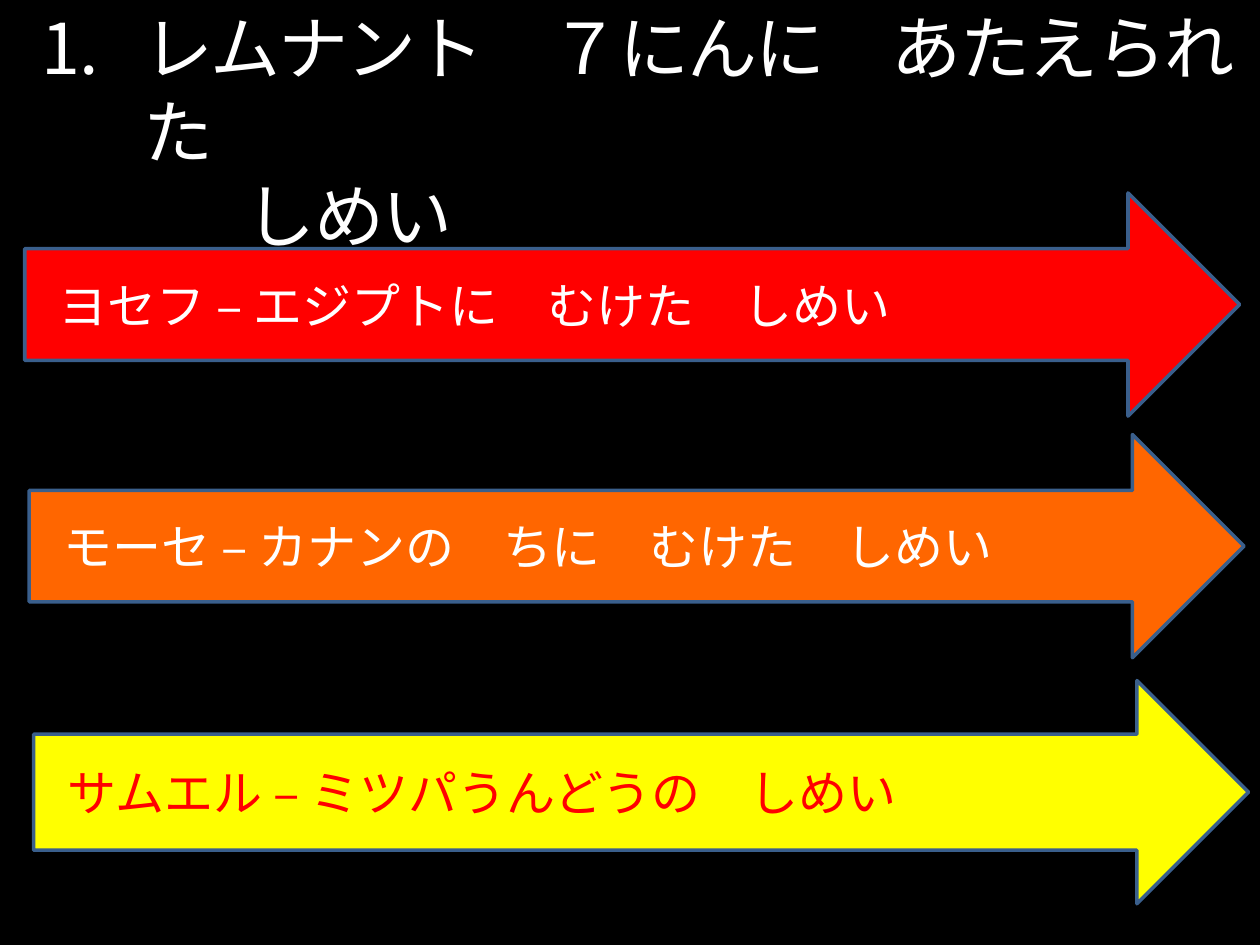
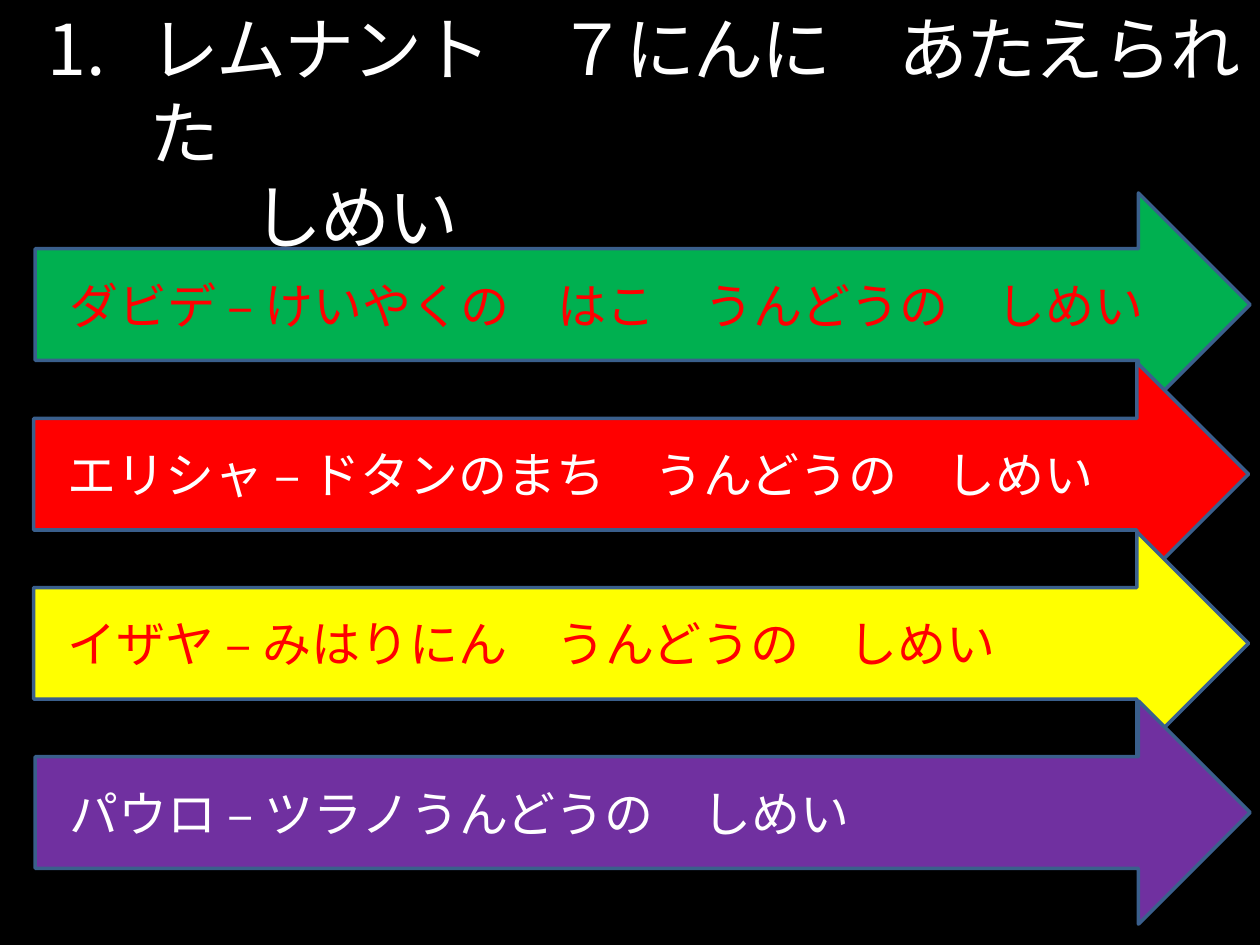
from dataclasses import dataclass

import pptx
import pptx.dml.color
import pptx.enum.shapes
import pptx.enum.text
import pptx.oxml.ns
import pptx.util
from lxml import etree

Cm = pptx.util.Cm
Pt = pptx.util.Pt
RGBColor = pptx.dml.color.RGBColor

BLACK = RGBColor(0x00, 0x00, 0x00)
WHITE = RGBColor(0xFF, 0xFF, 0xFF)
RED = RGBColor(0xFF, 0x00, 0x00)
ORANGE = RGBColor(0xFF, 0x66, 0x00)
YELLOW = RGBColor(0xFF, 0xFF, 0x00)
GREEN = RGBColor(0x00, 0xB0, 0x50)
PURPLE = RGBColor(0x70, 0x30, 0xA0)
OUTLINE = RGBColor(0x3A, 0x5F, 0x8C)

FONT = "Noto Sans CJK JP"
TITLE = "レムナント　７にんに　あたえられた"
TITLE_END = "しめい"


@dataclass(frozen=True)
class Mission:
    text: str
    left: float
    top: float
    fill: RGBColor
    color: RGBColor = WHITE
    shaft: float = 0.5


@dataclass(frozen=True)
class Page:
    title_left: float
    title_top: float
    missions: tuple[Mission, ...]


PAGES = (
    Page(0.58, 1.26, (
        Mission("ヨセフ – エジプトに　むけた　しめい", 0.5, 3.89, RED),
        Mission("モーセ – カナンの　ちに　むけた　しめい", 0.59, 8.76, ORANGE),
        Mission("サムエル – ミツパうんどうの　しめい", 0.68, 13.72, YELLOW, RED, 0.52),
    )),
    Page(0.71, 1.28, (
        Mission("ダビデ – けいやくの　はこ　うんどうの　しめい", 0.71, 3.89, GREEN, RED),
        Mission("エリシャ – ドタンのまち　うんどうの　しめい", 0.68, 7.31, RED),
        Mission("イザヤ – みはりにん　うんどうの　しめい", 0.68, 10.72, YELLOW, RED),
        Mission("パウロ – ツラノうんどうの　しめい", 0.71, 14.13, PURPLE),
    )),
)


def write(p, text: str, *, size: float, color: RGBColor, spacing: int = 0) -> None:
    p.alignment = pptx.enum.text.PP_ALIGN.LEFT
    r = p.add_run()
    r.text = text
    r.font.size = Pt(size)
    r.font.name = FONT
    r.font.color.rgb = color
    rpr = r.font._element
    if spacing:
        rpr.set("spc", str(spacing))
    ea = etree.SubElement(rpr, pptx.oxml.ns.qn("a:ea"))
    ea.set("typeface", FONT)


def indent(p, left: float, first: float = 0) -> None:
    ppr = p._p.get_or_add_pPr()
    ppr.set("marL", str(Cm(left)))
    ppr.set("indent", str(Cm(first)))


def number(p) -> None:
    ppr = p._p.get_or_add_pPr()
    bullet = etree.SubElement(ppr, pptx.oxml.ns.qn("a:buAutoNum"))
    bullet.set("type", "arabicPeriod")


def draw_title(s, left: float, top: float) -> None:
    sp = s.shapes.add_textbox(Cm(left), Cm(top), Cm(24.59), Cm(2.74))
    tf = sp.text_frame
    tf.word_wrap = True
    tf.vertical_anchor = pptx.enum.text.MSO_ANCHOR.MIDDLE
    tf.margin_right = Cm(0.15)
    heading = tf.paragraphs[0]
    indent(heading, 2.06, -2.06)
    number(heading)
    ending = tf.add_paragraph()
    indent(ending, 4.13)
    for p, text in ((heading, TITLE), (ending, TITLE_END)):
        p.line_spacing = Pt(48)
        write(p, text, size=40, color=WHITE, spacing=-100)


def draw_mission(s, mission: Mission) -> None:
    sp = s.shapes.add_shape(
        pptx.enum.shapes.MSO_SHAPE.RIGHT_ARROW,
        Cm(mission.left), Cm(mission.top), Cm(24.49), Cm(4.5),
    )
    sp.shadow.inherit = False
    sp.adjustments[0] = mission.shaft
    sp.fill.solid()
    sp.fill.fore_color.rgb = mission.fill
    sp.line.color.rgb = OUTLINE
    sp.line.width = Pt(2)
    tf = sp.text_frame
    tf.word_wrap = True
    tf.vertical_anchor = pptx.enum.text.MSO_ANCHOR.MIDDLE
    tf.margin_left = Cm(0.69)
    write(tf.paragraphs[0], mission.text, size=28, color=mission.color)


def main() -> None:
    prs = pptx.Presentation()
    prs.slide_width = Cm(25.4)
    prs.slide_height = Cm(19.05)
    for page in PAGES:
        s = prs.slides.add_slide(prs.slide_layouts[6])
        s.background.fill.solid()
        s.background.fill.fore_color.rgb = BLACK
        draw_title(s, page.title_left, page.title_top)
        for mission in page.missions:
            draw_mission(s, mission)
    prs.save("out.pptx")


if __name__ == "__main__":
    main()
